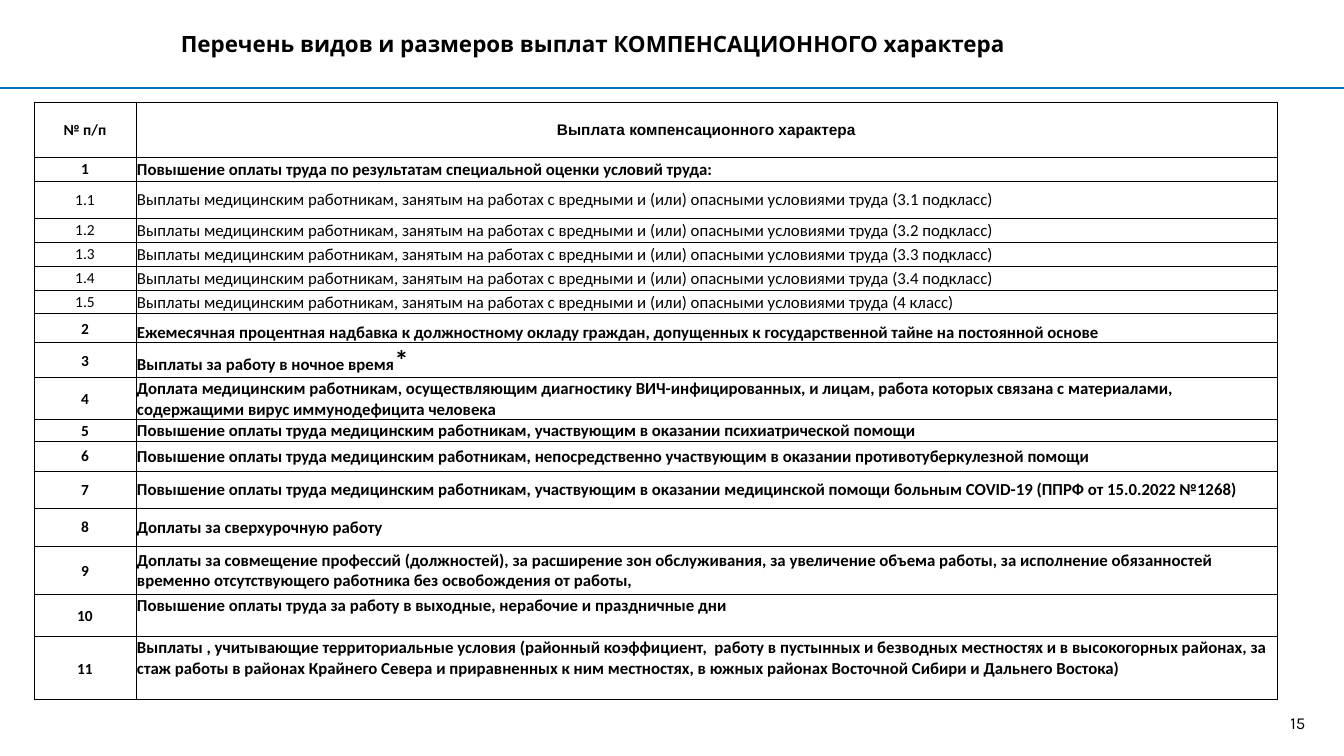
from pptx import Presentation
from pptx.dml.color import RGBColor
from pptx.enum.shapes import MSO_CONNECTOR
from pptx.enum.text import MSO_ANCHOR as ANCHOR, PP_ALIGN as ALIGN
from pptx.oxml import parse_xml
from pptx.oxml.ns import nsdecls
from pptx.util import Emu, Pt

PX = 914400 / 100.8
COLORS = {"text": "000000", "border": "000000", "cell": "FFFFFF", "rule": "0070C0"}

HARMFUL = ("Выплаты медицинским работникам, занятым на работах с вредными "
           "и (или) опасными условиями труда ({})")
CLASSES = ["3.1 подкласс", "3.2 подкласс", "3.3 подкласс", "3.4 подкласс", "4 класс"]
CLASS_HEIGHTS = [37, 24, 24, 24, 24]

# number, payment, row height, vertical anchor of the payment
PAYMENTS = [
    ("1", "Повышение оплаты труда по результатам специальной оценки условий труда:",
     24, ANCHOR.MIDDLE),
    *[(f"1.{i}", HARMFUL.format(name), height, ANCHOR.MIDDLE)
      for i, (name, height) in enumerate(zip(CLASSES, CLASS_HEIGHTS), 1)],
    ("2", "Ежемесячная процентная надбавка к должностному окладу граждан, "
          "допущенных к государственной тайне на постоянной основе", 29, ANCHOR.BOTTOM),
    ("3", "Выплаты за работу в ночное время", 35, ANCHOR.MIDDLE),
    ("4", "Доплата медицинским работникам, осуществляющим диагностику ВИЧ-инфицированных, "
          "и лицам, работа которых связана с материалами, содержащими вирус "
          "иммунодефицита человека", 42, ANCHOR.MIDDLE),
    ("5", "Повышение оплаты труда медицинским работникам, участвующим в оказании "
          "психиатрической помощи", 21, ANCHOR.MIDDLE),
    ("6", "Повышение оплаты труда медицинским работникам, непосредственно участвующим "
          "в оказании противотуберкулезной помощи", 30, ANCHOR.MIDDLE),
    ("7", "Повышение оплаты труда медицинским работникам, участвующим в оказании "
          "медицинской помощи больным COVID-19 (ППРФ от 15.0.2022 №1268)",
     37, ANCHOR.MIDDLE),
    ("8", "Доплаты за сверхурочную работу", 38, ANCHOR.MIDDLE),
    ("9", "Доплаты за совмещение профессий (должностей), за расширение зон обслуживания, "
          "за увеличение объема работы, за исполнение обязанностей временно "
          "отсутствующего работника без освобождения от работы,", 49, ANCHOR.MIDDLE),
    ("10", "Повышение оплаты труда за работу в выходные, нерабочие и праздничные дни",
     42, ANCHOR.TOP),
    ("11", "Выплаты , учитывающие территориальные условия (районный коэффициент,  работу "
           "в пустынных и безводных местностях и в высокогорных районах, за стаж работы "
           "в районах Крайнего Севера и приравненных к ним местностях, в южных районах "
           "Восточной Сибири и Дальнего Востока)", 63, ANCHOR.TOP),
]
HEADER_HEIGHT = 55


def px(n):
    return Emu(round(n * PX))


def rgb(name):
    return RGBColor.from_string(COLORS[name])


class SlideBuilder:
    def __init__(self, slide):
        self.slide = slide

    def style(self, r, size, font, bold=False):
        r.font.size = Pt(size)
        r.font.name = font
        r.font.bold = bold
        r.font.color.rgb = rgb("text")

    def text(self, x, y, w, h, text, size, bold=False):
        sp = self.slide.shapes.add_textbox(px(x), px(y), px(w), px(h))
        tf = sp.text_frame
        tf.word_wrap = True
        tf.vertical_anchor = ANCHOR.MIDDLE
        tf.text = text
        p = tf.paragraphs[0]
        p.alignment = ALIGN.CENTER
        self.style(p.runs[0], size, "Karla", bold)

    def rule(self, y, width):
        line = self.slide.shapes.add_connector(
            MSO_CONNECTOR.STRAIGHT, 0, px(y), px(width), px(y))
        line.line.color.rgb = rgb("rule")
        line.line.width = Pt(1.5)
        line._element.spPr.append(parse_xml(f"<a:effectLst {nsdecls('a')}/>"))

    def table(self, x, y, widths, heights):
        shape = self.slide.shapes.add_table(
            len(heights), len(widths), px(x), px(y), px(sum(widths)), px(sum(heights)))
        table = shape.table
        table.horz_banding = False
        for column, width in zip(table.columns, widths):
            column.width = px(width)
        for row, height in zip(table.rows, heights):
            row.height = px(height)
        return table

    def cell(self, cell, text, size, font="Calibri", bold=True,
             align=ALIGN.CENTER, anchor=ANCHOR.MIDDLE):
        cell.margin_left = cell.margin_right = cell.margin_top = px(1)
        cell.margin_bottom = 0
        cell.vertical_anchor = anchor
        cell.text = text
        p = cell.text_frame.paragraphs[0]
        p.alignment = align
        self.style(p.runs[0], size, font, bold)
        tc_pr = cell._tc.get_or_add_tcPr()
        for side in ("lnL", "lnR", "lnT", "lnB"):
            tc_pr.append(parse_xml(
                f'<a:{side} {nsdecls("a")} w="{Pt(0.5)}"><a:solidFill>'
                f'<a:srgbClr val="{COLORS["border"]}"/></a:solidFill></a:{side}>'))
        cell.fill.solid()
        cell.fill.fore_color.rgb = rgb("cell")
        return p


def main():
    prs = Presentation()
    prs.slide_width, prs.slide_height = px(1344), px(756)
    s = SlideBuilder(prs.slides.add_slide(prs.slide_layouts[6]))

    s.text(1252, 689, 92, 67, "15", 12)
    s.rule(88, 1344)
    s.text(21, 0, 1144, 88,
           "Перечень видов и размеров выплат КОМПЕНСАЦИОННОГО характера", 16, bold=True)

    heights = [HEADER_HEIGHT] + [height for _, _, height, _ in PAYMENTS]
    table = s.table(34, 102, [102, 1141], heights)
    s.cell(table.cell(0, 0), "№ п/п", 11)
    s.cell(table.cell(0, 1), "Выплата компенсационного характера", 11, font="Arial")
    for row, (number, payment, _, anchor) in enumerate(PAYMENTS, 1):
        bold = "." not in number
        s.cell(table.cell(row, 0), number, 11, bold=bold)
        p = s.cell(table.cell(row, 1), payment, 12, bold=bold,
                   align=ALIGN.LEFT, anchor=anchor)
        if number == "3":
            asterisk = p.add_run()
            asterisk.text = "*"
            s.style(asterisk, 20, "Calibri", bold)

    prs.save("out.pptx")


if __name__ == "__main__":
    main()
